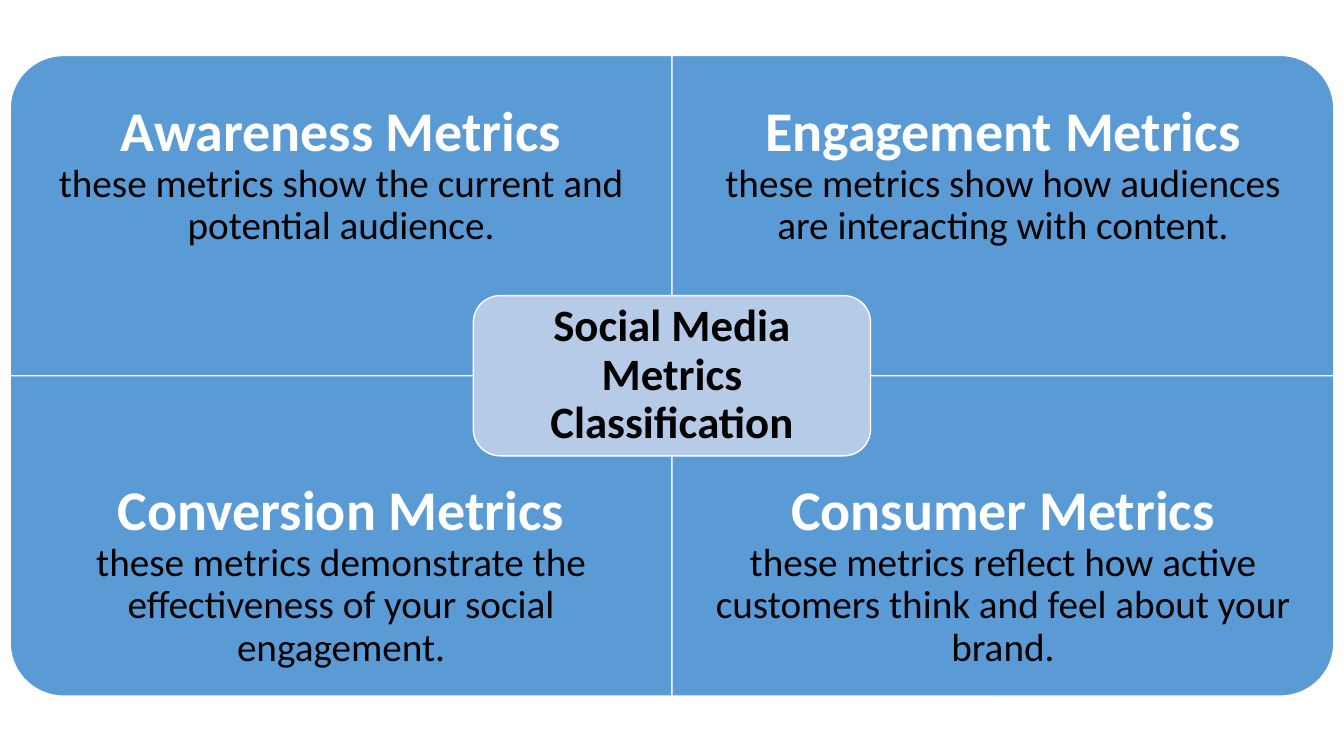
import pptx
import pptx.util
import pptx.dml.color
import pptx.enum.shapes
import pptx.enum.text

Pt = pptx.util.Pt
KIND = pptx.enum.shapes.MSO_SHAPE

LEFT, TOP = 7.2, 39.6
WIDE, HIGH = 472.8, 228.8
BAND = 171.6

CELLS = [
    (0, 0, 270, "Awareness Metrics",
     "these metrics show the current and potential audience."),
    (1, 0, 0, "Engagement Metrics",
     "these metrics show how audiences are interacting with content."),
    (0, 1, 180, "Conversion Metrics",
     "these metrics demonstrate the effectiveness of your social engagement."),
    (1, 1, 90, "Consumer Metrics",
     "these metrics reflect how active customers think and feel about your brand."),
]


def tint(code):
    return pptx.dml.color.RGBColor.from_string(code)


def panel(slide, kind, left, top, wide, high, fill, turn=0):
    if turn % 180:
        left += (wide - high) / 2
        top += (high - wide) / 2
        wide, high = high, wide
    shape = slide.shapes.add_shape(kind, Pt(left), Pt(top), Pt(wide), Pt(high))
    shape.rotation = turn
    shape.shadow.inherit = False
    shape.fill.solid()
    shape.fill.fore_color.rgb = tint(fill)
    shape.line.color.rgb = tint("FFFFFF")
    shape.line.width = Pt(1)


def label(slide, left, top, wide, high, inset):
    frame = slide.shapes.add_textbox(Pt(left), Pt(top), Pt(wide), Pt(high)).text_frame
    frame.word_wrap = True
    frame.vertical_anchor = pptx.enum.text.MSO_ANCHOR.MIDDLE
    frame.margin_left = frame.margin_right = Pt(inset)
    frame.margin_top = frame.margin_bottom = Pt(inset)
    para = frame.paragraphs[0]
    para.alignment = pptx.enum.text.PP_ALIGN.CENTER
    para.line_spacing = 0.9
    return para


def write(para, text, size=28, color="000000", bold=False):
    run = para.add_run()
    run.text = text
    run.font.name = "Calibri"
    run.font.size = Pt(size)
    run.font.bold = bold
    run.font.color.rgb = tint(color)


def metric(slide, col, row, turn, title, body):
    left, top = LEFT + col * WIDE, TOP + row * HIGH
    panel(slide, KIND.ROUND_1_RECTANGLE, left, top, WIDE, HIGH, "5B9BD5", turn)
    para = label(slide, left, top + row * (HIGH - BAND), WIDE, BAND, 22.4)
    write(para, title, size=40, color="FFFFFF", bold=True)
    para.add_line_break()
    write(para, body)


def center(slide, wide, high, pad):
    left, top = LEFT + WIDE - wide / 2, TOP + HIGH - high / 2
    panel(slide, KIND.ROUNDED_RECTANGLE, left, top, wide, high, "B5CBE7")
    para = label(slide, left + pad, top + pad, wide - 2 * pad, high - 2 * pad, 9.6)
    write(para, "Social Media Metrics Classification", size=32, bold=True)


def main():
    deck = pptx.Presentation()
    deck.slide_width, deck.slide_height = Pt(960), Pt(540)
    slide = deck.slides.add_slide(deck.slide_layouts[6])
    for cell in CELLS:
        metric(slide, *cell)
    center(slide, 283.7, 114.4, 5.6)
    deck.save("out.pptx")


if __name__ == "__main__":
    main()
